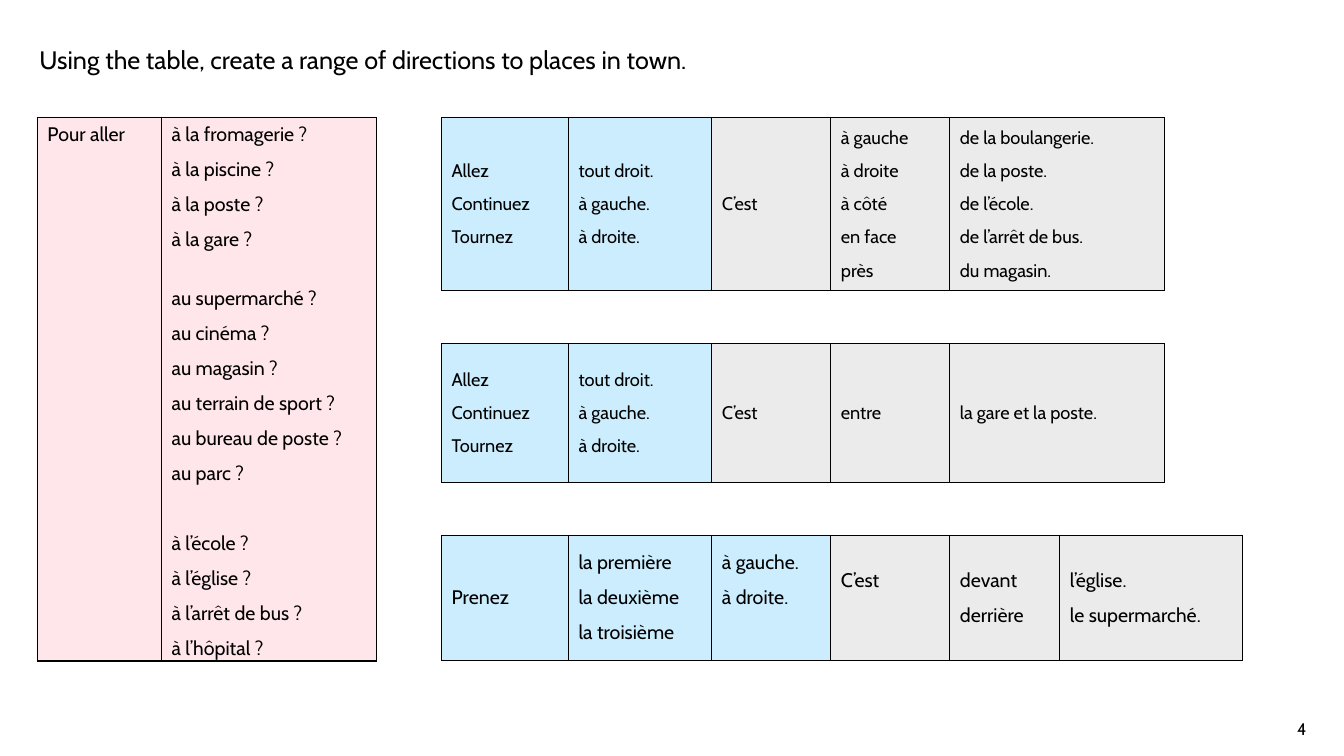
from lxml.etree import SubElement
from pptx import Presentation
from pptx.dml.color import RGBColor
from pptx.enum.text import MSO_ANCHOR, PP_ALIGN
from pptx.oxml.ns import qn
from pptx.util import Pt

FONT = "Cabin"
BLACK = "000000"
PINK, BLUE, GREY = "FFE6EA", "CBEDFD", "EBEBEB"
LINE_GAP = 8
WIDTHS = [90.7, 102.4, 85, 85]

VERBS = ["Allez", "Continuez", "Tournez"]
WAYS = ["tout droit.", "à gauche.", "à droite."]
SIDES = ["à gauche", "à droite", "à côté", "en face", "près"]
LANDMARKS = ["de la boulangerie.", "de la poste.", "de l’école.", "de l’arrêt de bus.", "du magasin."]
DESTINATIONS = [
    "à la fromagerie ?", "à la piscine ?", "à la poste ?", "à la gare ?",
    "au supermarché ?", "au cinéma ?", "au magasin ?", "au terrain de sport ?",
    "au bureau de poste ?", "au parc ?",
    "à l’école ?", "à l’église ?", "à l’arrêt de bus ?", "à l’hôpital ?",
]
GROUP_GAPS = {"à la gare ?": 25, "au parc ?": 33}


def color(value):
    return RGBColor.from_string(value)


def add_span(para, text, size):
    span = para.add_run()
    span.text = text
    span.font.name = FONT
    span.font.size = Pt(size)
    span.font.color.rgb = color(BLACK)


def add_label(page, left, top, width, height, text, size, align=PP_ALIGN.LEFT):
    box = page.shapes.add_textbox(Pt(left), Pt(top), Pt(width), Pt(height))
    frame = box.text_frame
    frame.word_wrap = True
    frame.margin_left = frame.margin_right = frame.margin_top = frame.margin_bottom = 0
    para = frame.paragraphs[0]
    para.alignment = align
    add_span(para, text, size)


def add_borders(cell):
    properties = cell._tc.get_or_add_tcPr()
    for side in ("a:lnL", "a:lnR", "a:lnT", "a:lnB"):
        line = SubElement(properties, qn(side), w=str(Pt(1)))
        fill = SubElement(line, qn("a:solidFill"))
        SubElement(fill, qn("a:srgbClr"), val=BLACK)


def fill_cell(cell, lines, fill, size, anchor, lift):
    add_borders(cell)
    cell.fill.solid()
    cell.fill.fore_color.rgb = color(fill)
    cell.vertical_anchor = anchor
    cell.margin_bottom = Pt(3.6 + lift)
    frame = cell.text_frame
    for index, text in enumerate(lines):
        para = frame.add_paragraph() if index else frame.paragraphs[0]
        para.space_after = Pt(GROUP_GAPS.get(text, LINE_GAP))
        add_span(para, text, size)


def add_phrase_table(page, left, top, height, widths, columns, fills, size,
                     anchor=MSO_ANCHOR.MIDDLE, lifts={}):
    frame = page.shapes.add_table(1, len(columns), Pt(left), Pt(top), Pt(sum(widths)), Pt(height))
    table = frame.table
    table.first_row = False
    table.horz_banding = False
    table.rows[0].height = Pt(height)
    for index, (width, lines, fill) in enumerate(zip(widths, columns, fills)):
        table.columns[index].width = Pt(width)
        fill_cell(table.cell(0, index), lines, fill, size, anchor, lifts.get(index, 0))


def main():
    deck = Presentation()
    deck.slide_width, deck.slide_height = Pt(960), Pt(540)
    page = deck.slides.add_slide(deck.slide_layouts[6])

    add_label(page, 28.1, 31.7, 544, 33,
              "Using the table, create a range of directions to places in town.", 18)
    add_phrase_table(page, 26.6, 83.7, 388, [88.8, 153.6], [["Pour aller"], DESTINATIONS],
                     [PINK] * 2, 14, MSO_ANCHOR.TOP)

    left = 315.4
    fills = [BLUE] * 2 + [GREY] * 3
    directions = [
        (84, 123.8, SIDES, LANDMARKS),
        (245.5, 99.4, ["entre"], ["la gare et la poste."]),
    ]
    for top, height, positions, places in directions:
        add_phrase_table(page, left, top, height, WIDTHS + [153.4],
                         [VERBS, WAYS, ["C’est"], positions, places], fills, 13)

    streets = [
        ["Prenez"], ["la première", "la deuxième", "la troisième"], WAYS[1:],
        ["C’est"], ["devant", "derrière"], ["l’église.", "le supermarché."],
    ]
    add_phrase_table(page, left, 382.3, 89.3, WIDTHS + [78.5, 130.4], streets,
                     [BLUE] * 3 + [GREY] * 3, 14, lifts={2: 25, 3: 25})
    add_label(page, 876.2, 513.4, 57, 14.4, "4", 12, PP_ALIGN.RIGHT)
    deck.save("out.pptx")


if __name__ == "__main__":
    main()
